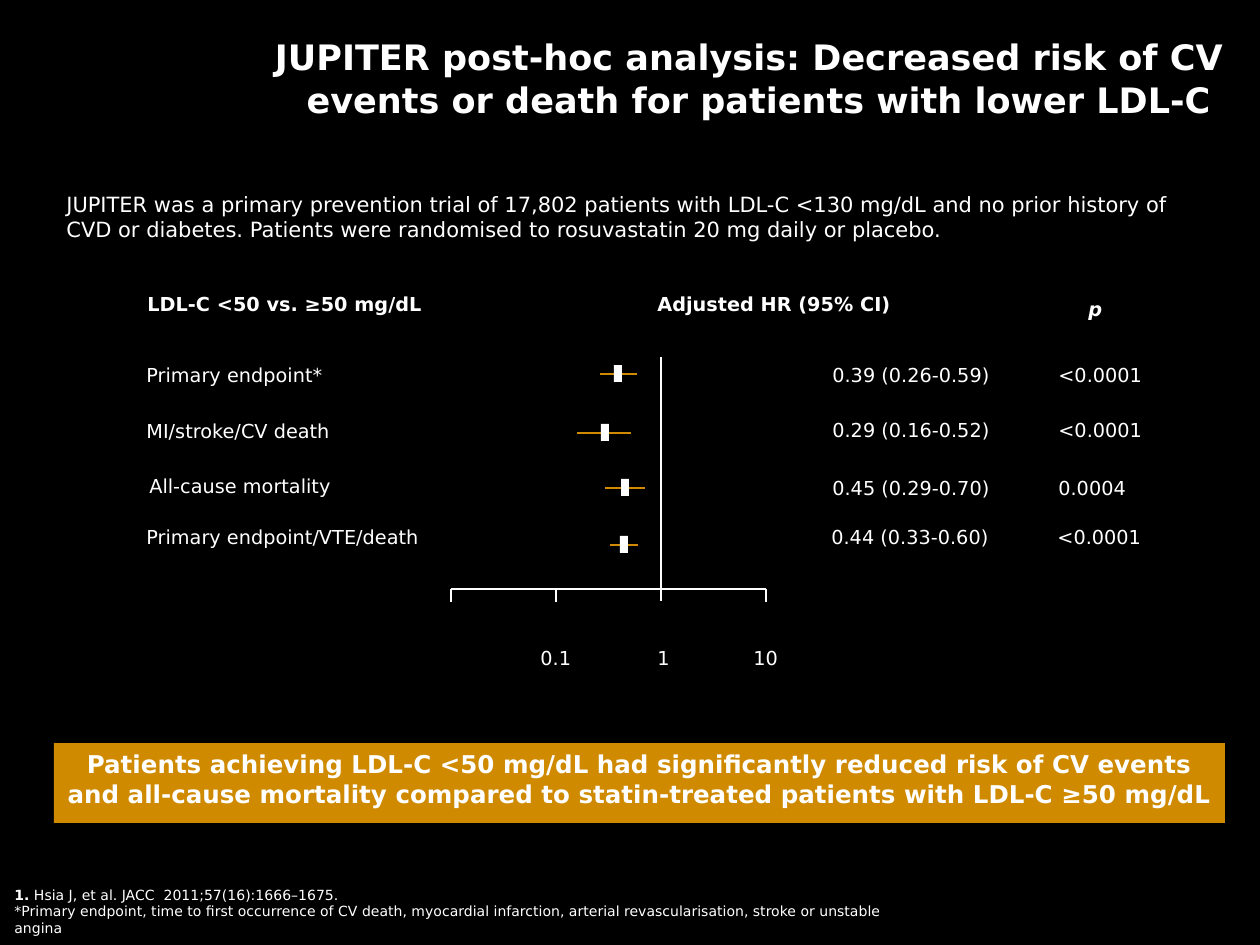
from dataclasses import dataclass
from math import log10

from lxml import etree
from pptx import Presentation
from pptx.dml.color import RGBColor
from pptx.enum.shapes import MSO_CONNECTOR, MSO_SHAPE
from pptx.enum.text import MSO_ANCHOR, MSO_AUTO_SIZE, PP_ALIGN
from pptx.oxml.ns import qn
from pptx.util import Emu, Pt

RECTANGLE = MSO_SHAPE.RECTANGLE
STRAIGHT = MSO_CONNECTOR.STRAIGHT
LEFT, CENTER, RIGHT = PP_ALIGN.LEFT, PP_ALIGN.CENTER, PP_ALIGN.RIGHT
TOP, MIDDLE = MSO_ANCHOR.TOP, MSO_ANCHOR.MIDDLE
FIT_SHAPE, NO_FIT = MSO_AUTO_SIZE.SHAPE_TO_FIT_TEXT, MSO_AUTO_SIZE.NONE

PX_PER_INCH = 126
FONT = "DejaVu Sans"
COLORS = {"background": "000000", "text": "FFFFFF", "accent": "CF8A00"}

# Logarithmic hazard-ratio axis
HR_ONE_X = 661
DECADE = 105
AXIS_Y = 589
TICK_BOTTOM = 602
PLOT_TOP = 357
LABEL_HEIGHT = 42


@dataclass
class Endpoint:
    name: str
    hr: float
    low: float
    high: float
    p_value: str
    name_left: int
    name_top: int
    name_width: int
    value_left: int
    value_top: int
    p_left: int
    interval_y: int


@dataclass
class Label:
    text: str
    left: int
    top: int
    width: int
    bold: bool = False
    italic: bool = False


ENDPOINTS = [
    Endpoint("Primary endpoint*", 0.39, 0.26, 0.59, "<0.0001", 134, 357, 205, 820, 357, 1046, 374),
    Endpoint("MI/stroke/CV death", 0.29, 0.16, 0.52, "<0.0001", 134, 413, 218, 820, 412, 1046, 433),
    Endpoint("All-cause mortality", 0.45, 0.29, 0.70, "0.0004", 137, 468, 209, 820, 470, 1046, 488),
    Endpoint("Primary endpoint/VTE/death", 0.44, 0.33, 0.60, "<0.0001", 134, 519, 304, 819, 519, 1045, 545),
]
HEADINGS = [
    Label("LDL-C <50 vs. ≥50 mg/dL", 135, 286, 310, bold=True),
    Label("Adjusted HR (95% CI)", 645, 286, 272, bold=True),
    Label("p", 1076, 291, 39, bold=True, italic=True),
]
TICK_LABELS = [
    Label("0.1", 528, 640, 57),
    Label("1", 645, 640, 38),
    Label("10", 741, 640, 50),
]


def px(length: int) -> Emu:
    return Emu(round(length * 914400 / PX_PER_INCH))


def color(name: str) -> RGBColor:
    return RGBColor.from_string(COLORS[name])


def hr_x(ratio: float) -> int:
    return round(HR_ONE_X + DECADE * log10(ratio))


def format_text(frame, size: int, bold: bool = False, italic: bool = False,
                align=LEFT, anchor=TOP) -> None:
    frame.vertical_anchor = anchor
    for paragraph in frame.paragraphs:
        paragraph.alignment = align
        for run in paragraph.runs:
            run.font.name = FONT
            run.font.size = Pt(size)
            run.font.bold = bold
            run.font.italic = italic
            run.font.color.rgb = color("text")


def add_text(slide, text: str, left: int, top: int, width: int, height: int, size: int,
             wrap: bool = True, bold: bool = False, italic: bool = False):
    frame = slide.shapes.add_textbox(px(left), px(top), px(width), px(height)).text_frame
    frame.text = text
    frame.word_wrap = wrap
    frame.auto_size = FIT_SHAPE
    format_text(frame, size, bold, italic)
    return frame


def add_label(slide, label: Label) -> None:
    add_text(slide, label.text, label.left, label.top, label.width, LABEL_HEIGHT, 11,
             wrap=False, bold=label.bold, italic=label.italic)


def add_line(slide, x1: int, y1: int, x2: int, y2: int, line_color: str = "text") -> None:
    line = slide.shapes.add_connector(STRAIGHT, px(x1), px(y1), px(x2), px(y2))
    line.line.color.rgb = color(line_color)
    line.line.width = Pt(1.5)
    etree.SubElement(line._element.spPr, qn("a:effectLst"))


def add_block(slide, left: int, top: int, width: int, height: int, fill: str):
    block = slide.shapes.add_shape(RECTANGLE, px(left), px(top), px(width), px(height))
    block.shadow.inherit = False
    block.fill.solid()
    block.fill.fore_color.rgb = color(fill)
    block.line.fill.background()
    return block


def add_endpoint(slide, row: Endpoint) -> None:
    add_line(slide, hr_x(row.low), row.interval_y, hr_x(row.high), row.interval_y, "accent")
    add_block(slide, hr_x(row.hr) - 4, row.interval_y - 9, 8, 17, "text")
    estimate = f"{row.hr:.2f} ({row.low:.2f}-{row.high:.2f})"
    add_label(slide, Label(row.name, row.name_left, row.name_top, row.name_width))
    add_label(slide, Label(estimate, row.value_left, row.value_top, 192))
    add_label(slide, Label(row.p_value, row.p_left, row.value_top, 111))


def main() -> None:
    deck = Presentation()
    deck.slide_width, deck.slide_height = px(1260), px(945)
    slide = deck.slides.add_slide(deck.slide_layouts[5])
    slide.background.fill.solid()
    slide.background.fill.fore_color.rgb = color("background")

    # Title
    title = slide.shapes.title
    title.left, title.top, title.width, title.height = px(194), px(-1), px(1042), px(158)
    title.text_frame.text = ("JUPITER post-hoc analysis: Decreased risk of CV events "
                             "or death for patients with lower LDL-C ")
    title.text_frame.auto_size = NO_FIT
    format_text(title.text_frame, 20, bold=True, align=RIGHT, anchor=MIDDLE)

    # Trial summary
    add_text(slide, "JUPITER was a primary prevention trial of 17,802 patients with LDL-C "
             "<130 mg/dL and no prior history of CVD or diabetes. Patients were randomised "
             "to rosuvastatin 20 mg daily or placebo.", 54, 185, 1131, 63, 12)

    # Forest plot: headings, axis and endpoints
    for label in HEADINGS + TICK_LABELS:
        add_label(slide, label)
    add_line(slide, hr_x(0.01), AXIS_Y, hr_x(10), AXIS_Y)
    for ratio in (0.01, 0.1, 10):
        add_line(slide, hr_x(ratio), AXIS_Y, hr_x(ratio), TICK_BOTTOM)
    add_line(slide, HR_ONE_X, PLOT_TOP, HR_ONE_X, TICK_BOTTOM - 1)
    for row in ENDPOINTS:
        add_endpoint(slide, row)

    # Conclusion banner
    banner = add_block(slide, 54, 743, 1171, 80, "accent")
    banner.text_frame.text = ("Patients achieving LDL-C <50 mg/dL had significantly reduced risk "
                              "of CV events and all-cause mortality compared to statin-treated "
                              "patients with LDL-C ≥50 mg/dL")
    banner.text_frame.word_wrap = True
    format_text(banner.text_frame, 14, bold=True, align=CENTER)

    # Reference and footnote
    footnote = add_text(slide, "1.\n*Primary endpoint, time to first occurrence of CV death, "
                        "myocardial infarction, arterial revascularisation, stroke or "
                        "unstable angina", 2, 880, 912, 83, 8)
    reference = footnote.paragraphs[0]
    reference.add_run().text = " Hsia J, et al. JACC  2011;57(16):1666–1675."
    format_text(footnote, 8)
    reference.runs[0].font.bold = True

    deck.save("out.pptx")


if __name__ == "__main__":
    main()
